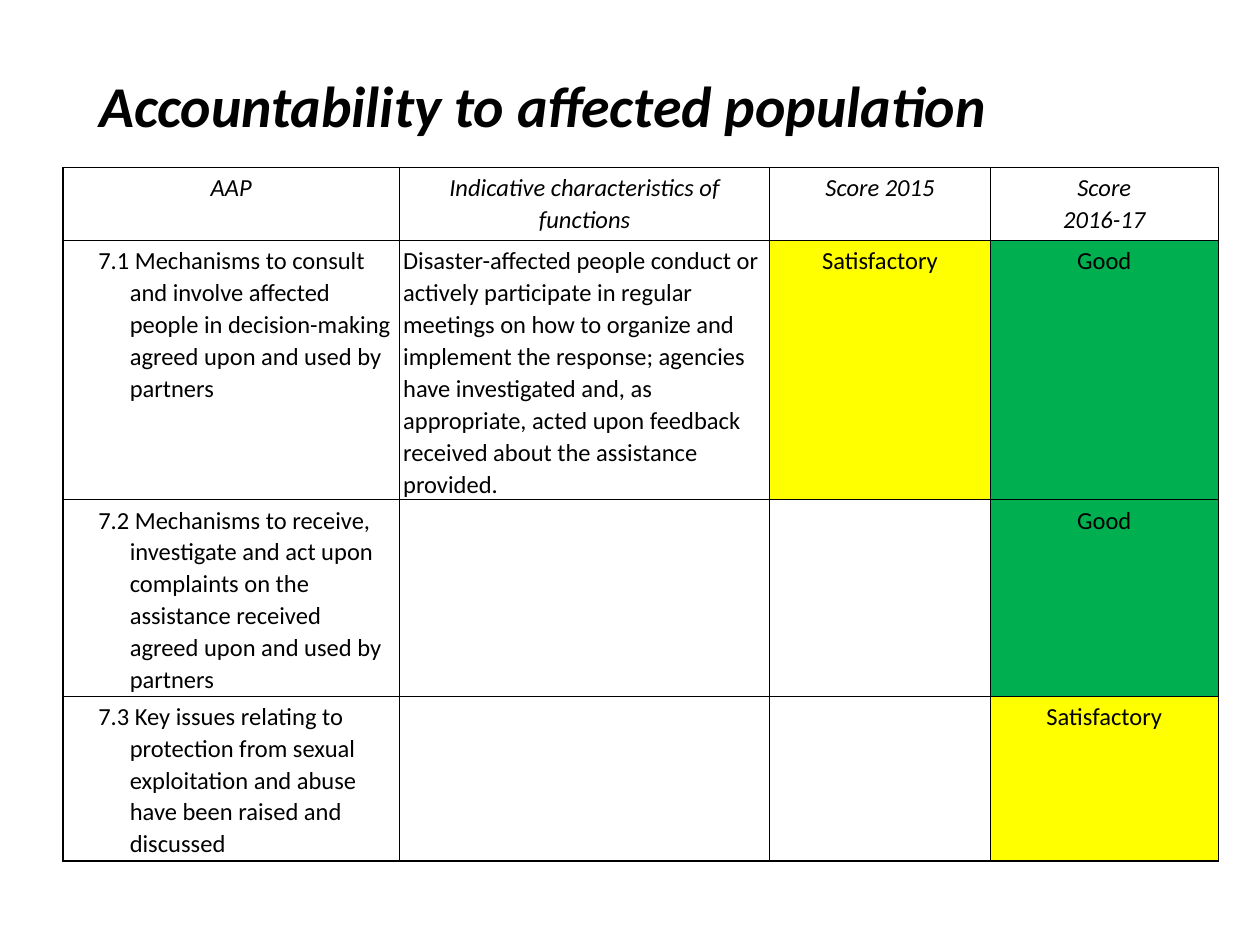
"""Build a slide with a score table on accountability to affected population."""
from dataclasses import dataclass
from typing import Optional

from lxml import etree
from pptx import Presentation
from pptx import util as u
from pptx.dml.color import RGBColor
from pptx.enum import text
from pptx.oxml import ns

BLACK = RGBColor(0x00, 0x00, 0x00)
YELLOW = RGBColor(0xFF, 0xFF, 0x00)
GREEN = RGBColor(0x00, 0xB0, 0x50)
FONT = "Calibri"
COLUMN_WIDTHS = (2.67, 2.94, 1.75, 1.81)
ROW_HEIGHTS = (0.58, 1.9, 1.43, 1.26)
CELL_MARGIN = u.Inches(0.03)
THICK, THIN = u.Pt(1), u.Pt(0.5)


@dataclass(frozen=True)
class Entry:
    """Content and look of one table cell."""

    lines: tuple[str, ...] = ()
    centered: bool = False
    italic: bool = False
    hanging: bool = False
    fill: Optional[RGBColor] = None


def header(*lines: str) -> Entry:
    """Return a column heading."""
    return Entry(lines, centered=True, italic=True)


def function(label: str) -> Entry:
    """Return a numbered function with a hanging indent."""
    return Entry((label,), hanging=True)


EMPTY = Entry()
GOOD = Entry(("Good",), centered=True, fill=GREEN)
SATISFACTORY = Entry(("Satisfactory",), centered=True, fill=YELLOW)
CHARACTERISTICS = Entry((
    "Disaster-affected people conduct or actively participate in regular meetings "
    "on how to organize and implement the response; agencies have investigated and, "
    "as appropriate, acted upon feedback received about the assistance provided.",
))
ROWS = (
    (header("AAP"), header("Indicative characteristics of functions"),
     header("Score 2015"), header("Score", "2016-17")),
    (function("7.1 Mechanisms to consult and involve affected people in "
              "decision-making agreed upon and used by partners"),
     CHARACTERISTICS, SATISFACTORY, GOOD),
    (function("7.2 Mechanisms to receive, investigate and act upon complaints on "
              "the assistance received agreed upon and used by partners"),
     EMPTY, EMPTY, GOOD),
    (function("7.3 Key issues relating to protection from sexual exploitation and "
              "abuse have been raised and discussed"),
     EMPTY, EMPTY, SATISFACTORY),
)


def add_span(para, words: str, size: float, bold: bool, italic: bool) -> None:
    """Add one formatted run to a paragraph."""
    span = para.add_run()
    span.text = words
    font = span.font
    font.name, font.size, font.bold, font.italic = FONT, u.Pt(size), bold, italic
    font.color.rgb = BLACK


def add_title(page, words: str) -> None:
    """Add the slide title."""
    box = page.shapes.add_textbox(u.Inches(0.69), u.Inches(0.4),
                                  u.Inches(8.62), u.Inches(0.93))
    frame = box.text_frame
    frame.word_wrap = True
    frame.vertical_anchor = text.MSO_ANCHOR.MIDDLE
    para = frame.paragraphs[0]
    para.line_spacing = 0.9
    add_span(para, words, 33, bold=True, italic=True)


def set_borders(cell, widths: dict[str, int]) -> None:
    """Draw solid black borders, given a width for each side tag."""
    properties = cell._tc.get_or_add_tcPr()
    for position, (side, width) in enumerate(widths.items()):
        line = etree.Element(ns.qn(f"a:{side}"), w=str(width))
        fill = etree.SubElement(line, ns.qn("a:solidFill"))
        etree.SubElement(fill, ns.qn("a:srgbClr"), val=str(BLACK))
        properties.insert(position, line)


def fill_cell(cell, entry: Entry) -> None:
    """Write an entry into a cell and set its fill."""
    cell.margin_left = cell.margin_right = CELL_MARGIN
    cell.margin_top = cell.margin_bottom = CELL_MARGIN
    if entry.fill is None:
        cell.fill.background()
    else:
        cell.fill.solid()
        cell.fill.fore_color.rgb = entry.fill
    frame = cell.text_frame
    for index, words in enumerate(entry.lines):
        para = frame.add_paragraph() if index else frame.paragraphs[0]
        para.line_spacing = 1.07
        para.alignment = text.PP_ALIGN.CENTER if entry.centered else text.PP_ALIGN.LEFT
        if entry.hanging:
            properties = para._p.get_or_add_pPr()
            properties.set("marL", str(u.Inches(0.5)))
            properties.set("indent", str(u.Inches(-0.25)))
        add_span(para, words, 14, bold=False, italic=entry.italic)


def add_score_table(page) -> None:
    """Add the table of functions and scores."""
    row_count, column_count = len(ROWS), len(COLUMN_WIDTHS)
    table = page.shapes.add_table(
        row_count, column_count, u.Inches(0.5), u.Inches(1.33),
        u.Inches(sum(COLUMN_WIDTHS)), u.Inches(sum(ROW_HEIGHTS))).table
    table.first_row = table.horz_banding = False
    for column, width in zip(table.columns, COLUMN_WIDTHS):
        column.width = u.Inches(width)
    for row, height in zip(table.rows, ROW_HEIGHTS):
        row.height = u.Inches(height)
    for r, entries in enumerate(ROWS):
        for c, entry in enumerate(entries):
            cell = table.cell(r, c)
            fill_cell(cell, entry)
            set_borders(cell, {
                "lnL": THICK if c in (0, 1) else THIN,
                "lnR": THICK if c in (0, column_count - 1) else THIN,
                "lnT": THICK if r == 0 else THIN,
                "lnB": THICK if r == row_count - 1 else THIN,
            })


def main() -> None:
    """Build and save the deck."""
    deck = Presentation()
    deck.slide_width, deck.slide_height = u.Inches(10), u.Inches(7.5)
    page = deck.slides.add_slide(deck.slide_layouts[6])
    add_title(page, "Accountability to affected population")
    add_score_table(page)
    deck.save("out.pptx")


if __name__ == "__main__":
    main()
